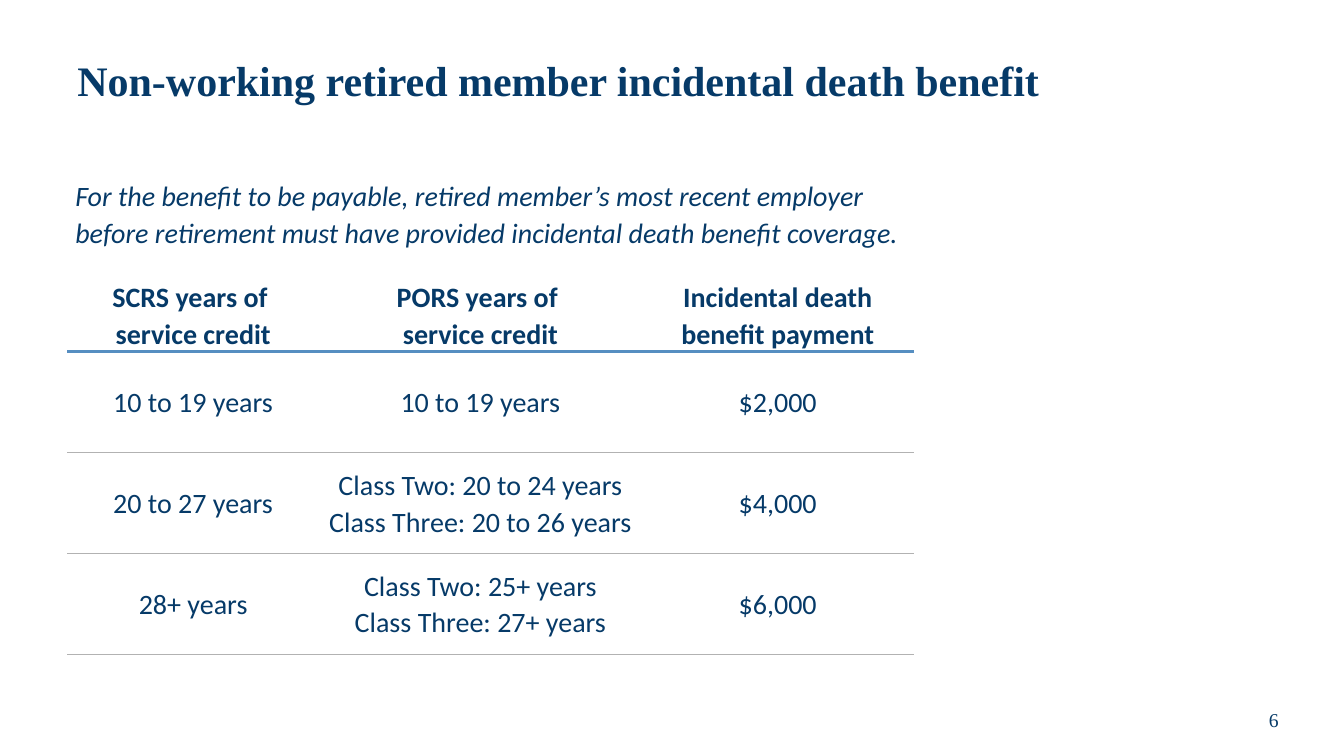
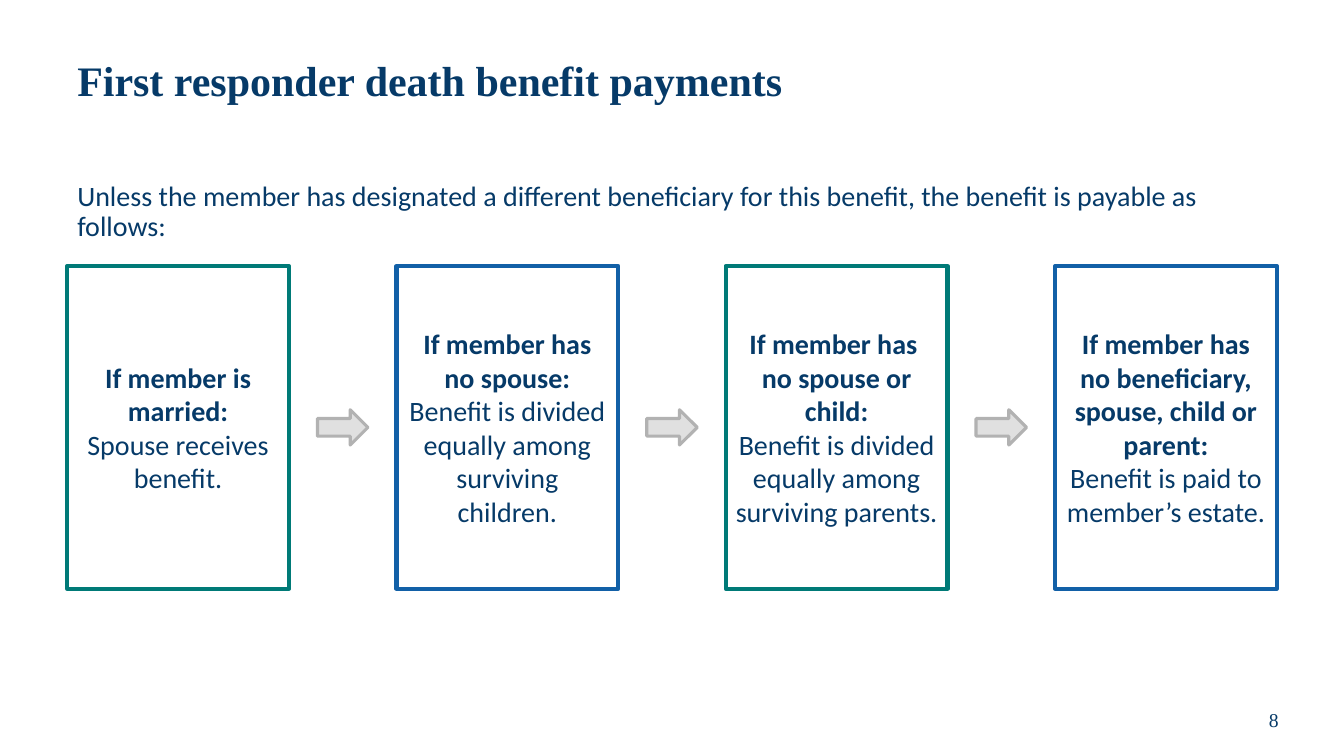
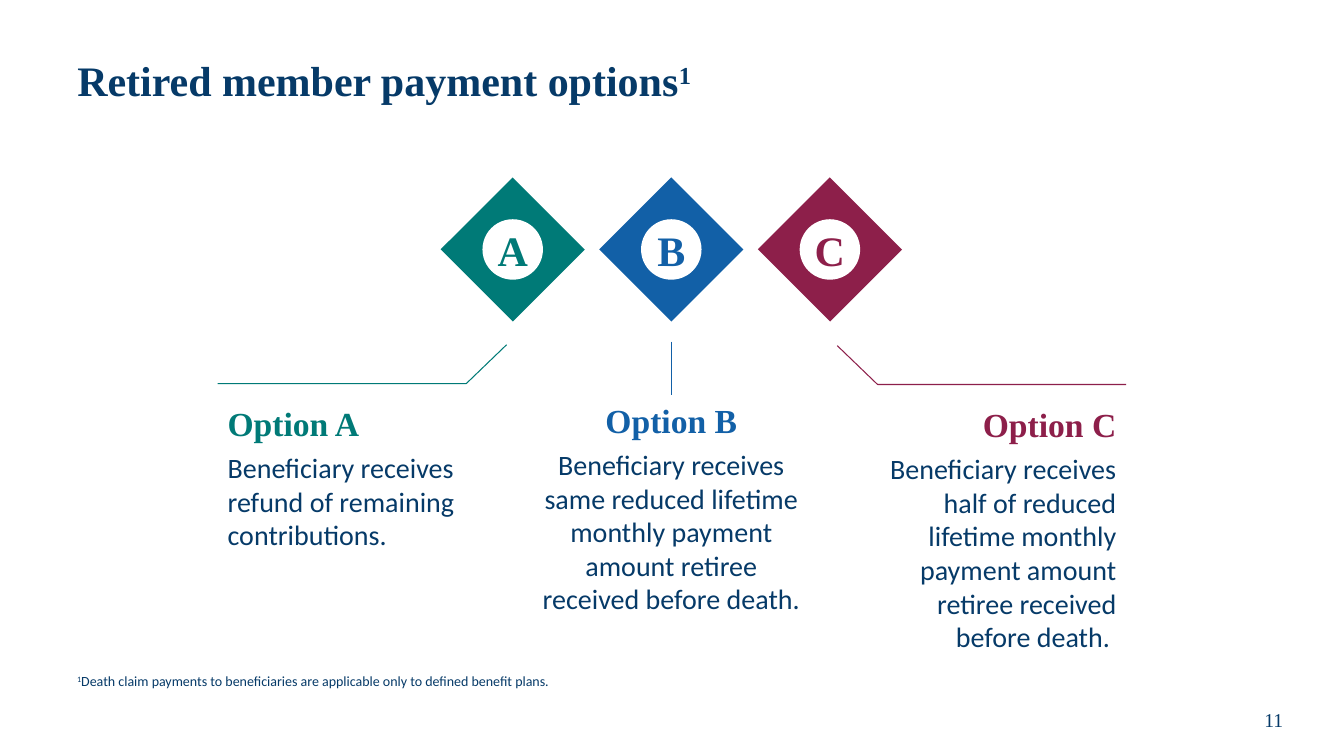
from dataclasses import dataclass, replace

from lxml import etree
from pptx import Presentation
from pptx import util as u
from pptx.dml.color import RGBColor
from pptx.enum import shapes, text
from pptx.oxml import ns

NAVY = RGBColor(0x06, 0x3A, 0x68)
TEAL = RGBColor(0x00, 0x7A, 0x77)
BLUE = RGBColor(0x12, 0x60, 0xA7)
MAROON = RGBColor(0x8D, 0x1F, 0x4A)
SKY = RGBColor(0x56, 0x8E, 0xC1)
SILVER = RGBColor(0xB2, 0xB2, 0xB2)
PALE = RGBColor(0xE0, 0xE0, 0xE0)
WHITE = RGBColor(0xFF, 0xFF, 0xFF)

SLIDE_WIDTH = u.Inches(13.33)
SLIDE_HEIGHT = u.Inches(7.5)
COLUMN = SLIDE_WIDTH / 20
ROW = SLIDE_HEIGHT / 30
PLAIN_TABLE = "{2D5ABB26-0587-4C30-8999-92F81FD0307C}"
SHAPE = shapes.MSO_SHAPE
ALIGN = text.PP_ALIGN
ANCHOR = text.MSO_ANCHOR


def across(columns):
    return u.Emu(round(columns * COLUMN))


def down(rows):
    return u.Emu(round(rows * ROW))


@dataclass(frozen=True)
class Box:
    left: float
    top: float
    width: float
    height: float

    def inside(self, left, top, width, height):
        return Box(self.left + left, self.top + top, width, height)

    def centred(self, width, height):
        return self.inside((self.width - width) / 2, (self.height - height) / 2, width, height)

    def lengths(self):
        return across(self.left), down(self.top), across(self.width), down(self.height)


@dataclass(frozen=True)
class Style:
    font: str = "Calibri"
    size: int = 20
    color: RGBColor = NAVY
    bold: bool = False
    italic: bool = False
    raised: bool = False


BODY = Style()
STRONG = Style(bold=True)
NOTE = Style(size=10)
TITLE = Style("Times New Roman", 30, bold=True)
NUMBER = Style("Times New Roman", 14)

TITLE_BOX = Box(1, 1, 18, 4.6)
BODY_BOX = Box(1, 7.04, 18, 20.52)
NUMBER_BOX = Box(18.08, 27.56, 1.75, 2)


def add_run(paragraph, words, style):
    run = paragraph.add_run()
    run.text = words
    font = run.font
    font.name, font.size = style.font, u.Pt(style.size)
    font.bold, font.italic = style.bold, style.italic
    font.color.rgb = style.color
    if style.raised:
        run._r.get_or_add_rPr().set("baseline", "30000")


def write(frame, paragraphs, align=ALIGN.LEFT, spacing=1.0, bullets=True):
    for index, runs in enumerate(paragraphs):
        paragraph = frame.add_paragraph() if index else frame.paragraphs[0]
        if not bullets:
            properties = paragraph._p.get_or_add_pPr()
            properties.set("marL", "0")
            properties.set("indent", "0")
            etree.SubElement(properties, ns.qn("a:buNone"))
        paragraph.alignment = align
        paragraph.line_spacing = spacing
        paragraph.space_before = u.Pt(0)
        for words, style in runs:
            for position, line in enumerate(words.split("\n")):
                if position:
                    paragraph.add_line_break()
                add_run(paragraph, line, style)


def set_frame(frame, anchor, inset=None):
    frame.word_wrap = True
    frame.auto_size = text.MSO_AUTO_SIZE.NONE
    frame.vertical_anchor = anchor
    if inset is not None:
        frame.margin_left = frame.margin_right = u.Inches(inset)
        frame.margin_top = frame.margin_bottom = u.Inches(inset)


def add_text(slide, box, paragraphs, align=ALIGN.LEFT, anchor=ANCHOR.TOP, inset=None):
    frame = slide.shapes.add_textbox(*box.lengths()).text_frame
    set_frame(frame, anchor, inset)
    write(frame, paragraphs, align)


def fill_placeholder(placeholder, box, paragraphs, anchor):
    placeholder.left, placeholder.top, placeholder.width, placeholder.height = box.lengths()
    set_frame(placeholder.text_frame, anchor)
    write(placeholder.text_frame, paragraphs, spacing=0.9, bullets=False)


def add_shape(slide, kind, box, fill=None, line=None, weight=0):
    shape = slide.shapes.add_shape(kind, *box.lengths())
    shape.shadow.inherit = False
    if fill is None:
        shape.fill.background()
    else:
        shape.fill.solid()
        shape.fill.fore_color.rgb = fill
    if line is None:
        shape.line.fill.background()
    else:
        shape.line.color.rgb = line
        shape.line.width = u.Pt(weight)
    return shape


def add_slide(presentation, layout, title, number):
    slide = presentation.slides.add_slide(presentation.slide_layouts[layout])
    fill_placeholder(slide.shapes.title, TITLE_BOX, [title], ANCHOR.MIDDLE)
    add_text(slide, NUMBER_BOX, [[(number, NUMBER)]], ALIGN.CENTER, ANCHOR.MIDDLE)
    return slide


def set_bottom_border(cell, color, weight):
    border = etree.Element(ns.qn("a:lnB"), w=str(u.Pt(weight)))
    fill = etree.SubElement(border, ns.qn("a:solidFill"))
    etree.SubElement(fill, ns.qn("a:srgbClr"), val=str(color))
    cell._tc.get_or_add_tcPr().insert(0, border)


def fill_cell(cell, words, style, align, anchor):
    cell.fill.background()
    cell.vertical_anchor = anchor
    cell.margin_left = cell.margin_right = u.Inches(0.08)
    cell.margin_top = cell.margin_bottom = 0
    write(cell.text_frame, [[(line, style)] for line in words], align, 1.07)


def add_benefit_table(slide, box, note, header, records):
    frame = slide.shapes.add_table(len(records) + 2, len(header), *box.lengths())
    frame.element.find(".//" + ns.qn("a:tableStyleId")).text = PLAIN_TABLE
    table = frame.table
    table.first_row = table.horz_banding = False
    for column, width in zip(table.columns, (3.75, 4.8, 4.05)):
        column.width = across(width)
    for row, height in zip(table.rows, (2.92, 4, 4, 4, 4)):
        row.height = down(height)
    table.cell(0, 0).merge(table.cell(0, len(header) - 1))
    fill_cell(table.cell(0, 0), [note], Style(italic=True), ALIGN.LEFT, ANCHOR.MIDDLE)
    for index, label in enumerate(header):
        cell = table.cell(1, index)
        fill_cell(cell, [label], STRONG, ALIGN.CENTER, ANCHOR.BOTTOM)
        set_bottom_border(cell, SKY, 2.25)
    for row, record in enumerate(records, 2):
        for index, words in enumerate(record):
            cell = table.cell(row, index)
            fill_cell(cell, words, BODY, ALIGN.CENTER, ANCHOR.MIDDLE)
            set_bottom_border(cell, SILVER, 0.5)


def add_payment_flow(slide, box, steps):
    width = 3.3
    pitch = (box.width - width) / (len(steps) - 1)
    for index, (condition, payment) in enumerate(steps):
        step = box.inside(index * pitch, 0, width, box.height)
        card = add_shape(slide, SHAPE.RECTANGLE, step, line=(TEAL, BLUE)[index % 2], weight=3)
        set_frame(card.text_frame, ANCHOR.MIDDLE, 0.1)
        write(card.text_frame, [[(condition, STRONG)], [(payment, BODY)]], ALIGN.CENTER)
        if index:
            gap = step.inside(width - pitch - width, 0, pitch - width, box.height)
            gap = step.inside(width - pitch, 0, pitch - width, box.height)
            add_shape(slide, SHAPE.RIGHT_ARROW, gap.centred(0.75, 1.4), PALE, SILVER, 2.25)


def add_badge(slide, box, letter, color):
    diamond = add_shape(slide, SHAPE.RECTANGLE, box, color)
    diamond.rotation = 45
    disc = add_shape(slide, SHAPE.OVAL, box.centred(0.9, 2.4), WHITE)
    set_frame(disc.text_frame, ANCHOR.MIDDLE, 0)
    write(disc.text_frame, [[(letter, replace(TITLE, color=color))]], ALIGN.CENTER)


def add_leader(slide, box, color, align):
    tip, knee, foot = (down(box.top + offset) for offset in (-2.44, -0.9, -0.32))
    if align == ALIGN.CENTER:
        middle = across(box.left + box.width / 2)
        leader = slide.shapes.add_connector(
            shapes.MSO_CONNECTOR.STRAIGHT, middle, tip, middle, foot)
        etree.SubElement(leader._element.spPr, ns.qn("a:effectLst"))
    else:
        edge, inward = (box.left, 1) if align == ALIGN.LEFT else (box.left + box.width, -1)
        builder = slide.shapes.build_freeform(across(edge + inward * 4.3), tip)
        builder.add_line_segments(
            [(across(edge + inward * 3.7), knee), (across(edge), knee)], close=False)
        leader = builder.convert_to_shape()
        leader.shadow.inherit = False
        leader.fill.background()
    leader.line.color.rgb = color
    leader.line.width = u.Pt(0.75)


def add_option(slide, box, letter, color, align, words):
    add_leader(slide, box, color, align)
    heading = replace(TITLE, size=24, color=color)
    add_text(slide, box.inside(0, 0, box.width, 1.36), [[("Option " + letter, heading)]],
             align, ANCHOR.MIDDLE, 0.1)
    add_text(slide, box.inside(0, 1.36, box.width, box.height - 1.36), [[(words, BODY)]],
             align, inset=0.1)


def build_benefit_slide(presentation):
    slide = add_slide(
        presentation, 5, [("Non-working retired member incidental death benefit", TITLE)], "6")
    add_benefit_table(
        slide, Box(1, 7.04, 12.6, 18.92),
        "For the benefit to be payable, retired member’s most recent employer "
        "before retirement must have provided incidental death benefit coverage.",
        ("SCRS years of \nservice credit", "PORS years of \nservice credit",
         "Incidental death benefit payment"),
        ((["10 to 19 years"], ["10 to 19 years"], ["$2,000"]),
         (["20 to 27 years"], ["Class Two: 20 to 24 years", "Class Three: 20 to 26 years"],
          ["$4,000"]),
         (["28+ years"], ["Class Two: 25+ years", "Class Three: 27+ years"], ["$6,000"])))


def build_payment_slide(presentation):
    slide = add_slide(presentation, 1, [("First responder death benefit payments", TITLE)], "8")
    fill_placeholder(
        slide.placeholders[1], BODY_BOX,
        [[("Unless the member has designated a different beneficiary for this benefit, "
           "the benefit is payable as follows:", BODY)]], ANCHOR.TOP)
    add_payment_flow(slide, Box(1, 10.56, 18, 12.8), (
        ("If member is married:", "Spouse receives benefit."),
        ("If member has no spouse:", "Benefit is divided equally among surviving children."),
        ("If member has \nno spouse or child:",
         "Benefit is divided equally among surviving parents."),
        ("If member has no beneficiary, spouse, child or parent:",
         "Benefit is paid to member’s estate.")))


def build_option_slide(presentation):
    slide = add_slide(
        presentation, 5,
        [("Retired member payment options", TITLE), ("1", replace(TITLE, raised=True))], "11")
    add_text(slide, Box(1, 26.48, 9.27, 1.08), [[
        ("1", replace(NOTE, raised=True)),
        ("Death claim payments to beneficiaries are applicable only to defined benefit plans.",
         NOTE)]])
    options = (
        ("A", TEAL, ALIGN.LEFT, Box(3.24, 16.12, 3.72, 5.64),
         "Beneficiary receives refund of remaining contributions."),
        ("B", BLUE, ALIGN.CENTER, Box(7.89, 16, 4.2, 8.84),
         "Beneficiary receives same reduced lifetime monthly payment amount "
         "retiree received before death."),
        ("C", MAROON, ALIGN.RIGHT, Box(12.83, 16.16, 3.93, 9.72),
         "Beneficiary receives half of reduced lifetime monthly payment amount "
         "retiree received before death. "))
    for index, (letter, color, align, box, words) in enumerate(options):
        add_badge(slide, Box(6.87 + 2.36 * index, 7.88, 1.52, 4.04), letter, color)
        add_option(slide, box, letter, color, align, words)


def main():
    presentation = Presentation()
    presentation.slide_width = SLIDE_WIDTH
    presentation.slide_height = SLIDE_HEIGHT
    build_benefit_slide(presentation)
    build_payment_slide(presentation)
    build_option_slide(presentation)
    presentation.save("out.pptx")


if __name__ == "__main__":
    main()
